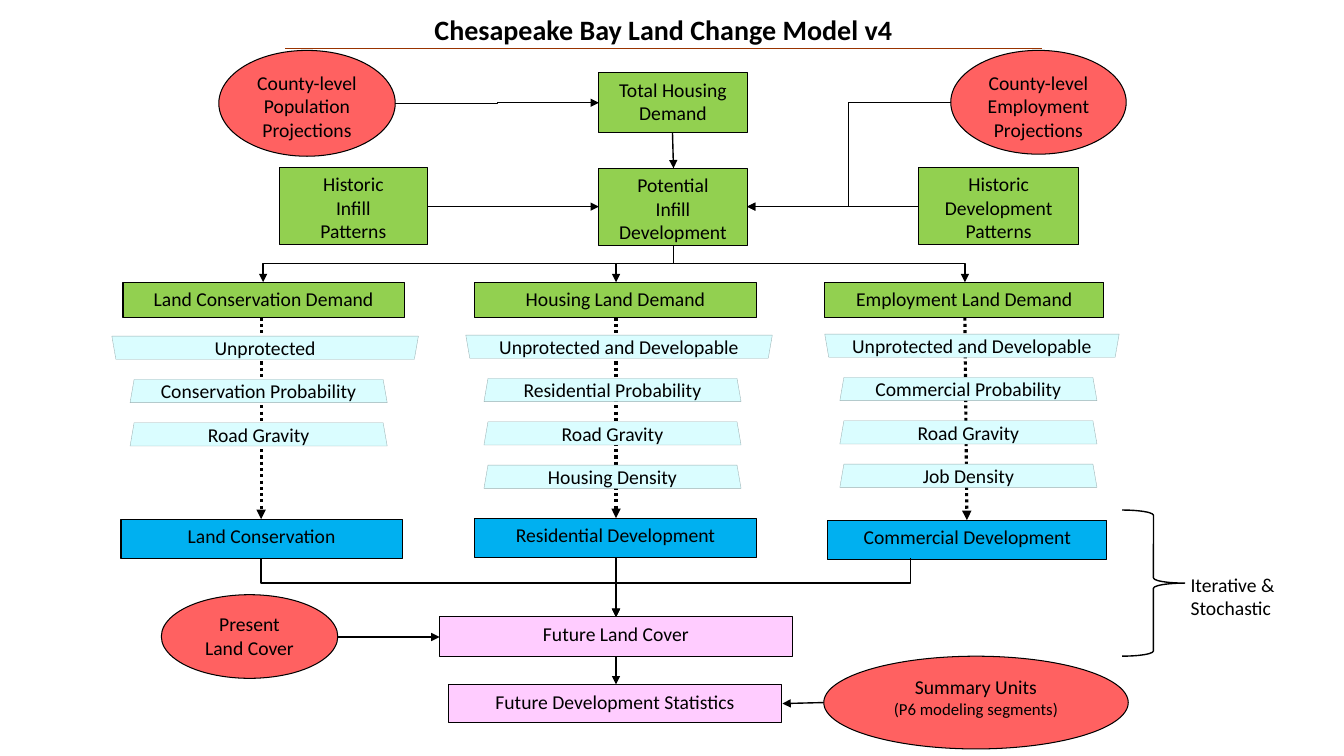
from lxml import etree
from pptx import Presentation, util as u
from pptx.dml.color import RGBColor
from pptx.enum import dml, shapes as sh, text as tx
from pptx.oxml.ns import qn

BLACK = RGBColor(0x00, 0x00, 0x00)
BROWN = RGBColor(0x99, 0x33, 0x00)
RED = RGBColor(0xFF, 0x61, 0x61)
GREEN = RGBColor(0x92, 0xD0, 0x50)
BLUE = RGBColor(0x00, 0xB0, 0xF0)
PINK = RGBColor(0xFF, 0xCC, 0xFF)
CYAN = RGBColor(0xDA, 0xFD, 0xFF)
GRAY = RGBColor(0x9A, 0xB0, 0xB2)
FONT = "Calibri"
RECT, OVAL = sh.MSO_SHAPE.RECTANGLE, sh.MSO_SHAPE.OVAL

TITLE = "Chesapeake Bay Land Change Model v4"
NOTE = "Iterative & Stochastic"

# Nodes: kind, fill, (left, top, width, height), text
NODES = [
    (OVAL, RED, (2.17, 0.5, 1.75, 1.05), "County-level\nPopulation\nProjections"),
    (OVAL, RED, (9.43, 0.5, 1.74, 1.03), "County-level\nEmployment\nProjections"),
    (RECT, GREEN, (5.94, 0.72, 1.47, 0.59), "Total Housing\nDemand"),
    (RECT, GREEN, (2.77, 1.66, 1.47, 0.77), "Historic\nInfill\nPatterns"),
    (RECT, GREEN, (5.94, 1.67, 1.47, 0.77), "Potential\nInfill\nDevelopment"),
    (RECT, GREEN, (9.11, 1.66, 1.59, 0.77), "Historic\nDevelopment\nPatterns"),
    (OVAL, RED, (1.6, 5.9, 1.75, 0.83), "Present\nLand Cover"),
    (RECT, PINK, (4.36, 6.12, 3.5, 0.39), "Future Land Cover"),
    (RECT, PINK, (4.45, 6.79, 3.3, 0.38), "Future Development Statistics"),
    (OVAL, RED, (8.17, 6.51, 3.02, 0.92), "Summary Units\n(P6 modeling segments)"),
]

# Columns: demand (left, width, text), goal (left, top, width, text),
# dotted line x at both ends, first bar (left, width), other bars' left,
# middle of the first bar, bar texts
COLS = [
    ((1.22, 2.79, "Land Conservation Demand"),
     (1.2, 5.15, 2.79, "Land Conservation"), (2.59, 2.59),
     (1.11, 3.04), 1.29, 3.45,
     ["Unprotected", "Conservation Probability", "Road Gravity"]),
    ((4.71, 2.79, "Housing Land Demand"),
     (4.71, 5.14, 2.79, "Residential Development"), (6.11, 6.11),
     (4.62, 3.04), 4.8, 3.44,
     ["Unprotected and Developable", "Residential Probability",
      "Road Gravity", "Housing Density"]),
    ((8.18, 2.77, "Employment Land Demand"),
     (8.21, 5.16, 2.77, "Commercial Development"), (9.57, 9.59),
     (8.18, 2.92), 8.33, 3.43,
     ["Unprotected and Developable", "Commercial Probability",
      "Road Gravity", "Job Density"]),
]
BAR_W, BAR_H, STEP, SLANT = 2.55, 0.23, 0.43, 0.04

# Arrows: start x, y, end x, y, width
STRAIGHT = [
    (6.67, 1.31, 6.68, 1.67, 1), (4.23, 2.05, 5.94, 2.05, 0.75),
    (9.11, 2.05, 7.41, 2.05, 0.75), (6.11, 5.53, 6.11, 6.12, 1),
    (3.35, 6.32, 4.36, 6.32, 1), (6.11, 6.51, 6.11, 6.79, 1),
    (8.17, 6.97, 7.76, 6.98, 1),
]
ACROSS = [(3.92, 1.03, 5.94, 1.02, 0.75), (9.43, 1.02, 7.41, 2.05, 0.75)]
# Down first: start x, y, end x, y, share of the drop before the bend
DOWN = [(6.68, 2.43, x, 2.8, 0.5) for x in (2.61, 6.11, 9.57)]
DOWN += [(x, 5.54, 6.11, 6.12, 0.417) for x in (2.59, 9.03)]

deck = Presentation()
deck.slide_width, deck.slide_height = u.Inches(13.33), u.Inches(7.5)
parts = deck.slides.add_slide(deck.slide_layouts[6]).shapes


def write(shape, words, size=14, bold=False, align=tx.PP_ALIGN.CENTER):
    frame = shape.text_frame
    frame.word_wrap = True
    frame.vertical_anchor = tx.MSO_ANCHOR.TOP
    frame.text = words
    for para in frame.paragraphs:
        para.alignment = align
        font = para.font
        font.name, font.size, font.bold = FONT, u.Pt(size), bold
        font.color.rgb = BLACK
    return frame


def paint(shape, fill, line=BLACK, width=0.75):
    shape.shadow.inherit = False
    shape.fill.solid()
    shape.fill.fore_color.rgb = fill
    shape.line.color.rgb = line
    shape.line.width = u.Pt(width)


def node(kind, fill, box, words):
    shape = parts.add_shape(kind, *map(u.Inches, box))
    paint(shape, fill)
    return write(shape, words)


def link(x1, y1, x2, y2, width, kind=sh.MSO_CONNECTOR.STRAIGHT,
         color=BLACK, head=True):
    line = parts.add_connector(kind, *map(u.Inches, (x1, y1, x2, y2)))
    line.line.color.rgb = color
    line.line.width = u.Pt(width)
    if head:
        etree.SubElement(line.line._get_or_add_ln(), qn("a:tailEnd"), type="triangle")
    etree.SubElement(line._element.spPr, qn("a:effectLst"))
    return line


def drop(x1, y1, x2, y2, bend):
    """Elbow that leaves downwards: a level elbow turned a quarter."""
    turn = 1 if x2 < x1 else -1
    mx, my = (x1 + x2) / 2, (y1 + y2) / 2
    du, dv = turn * (y2 - y1) / 2, turn * (x2 - x1) / 2
    line = link(mx - du, my + dv, mx + du, my - dv, 1, sh.MSO_CONNECTOR.ELBOW)
    props = line._element.spPr
    props.find(qn("a:xfrm")).set("rot", str(turn * 5400000 % 21600000))
    geom = props.find(qn("a:prstGeom"))
    av = geom.find(qn("a:avLst"))
    if av is None:
        av = etree.SubElement(geom, qn("a:avLst"))
    etree.SubElement(av, qn("a:gd"), name="adj1", fmla=f"val {round(bend * 100000)}")


def bar(left, mid, width, words, flip):
    """Slanted bar, wide at the top when flipped."""
    top, low = mid - BAR_H / 2, mid + BAR_H / 2
    a, b = (0, SLANT) if flip else (SLANT, 0)
    pen = parts.build_freeform(u.Inches(left + a), u.Inches(top))
    pen.add_line_segments([(u.Inches(x), u.Inches(y)) for x, y in (
        (left + width - a, top), (left + width - b, low), (left + b, low))])
    shape = pen.convert_to_shape()
    paint(shape, CYAN, GRAY, 0.25)
    frame = write(shape, words)
    frame.margin_top = frame.margin_bottom = 0
    frame.vertical_anchor = tx.MSO_ANCHOR.MIDDLE


# Title and rule
write(parts.add_textbox(*map(u.Inches, (2.54, 0.07, 8.08, 0.44))), TITLE, 20, True)
link(2.83, 0.48, 10.33, 0.48, 0.75, color=BROWN, head=False)

# Three columns
for demand, goal, ends, first, left, mid, names in COLS:
    dots = link(ends[0], 3.15, ends[1], goal[1], 2.25)
    dots.line.dash_style = dml.MSO_LINE.ROUND_DOT
    node(RECT, GREEN, (demand[0], 2.8, demand[1], 0.35), demand[2])
    node(RECT, BLUE, (*goal[:3], 0.39), goal[3])
    for row, name in enumerate(names):
        x, w = (left, BAR_W) if row else first
        bar(x, mid + row * STEP, w, name, row == 0)

# Arrows
for ends in STRAIGHT:
    link(*ends)
for ends in ACROSS:
    link(*ends, kind=sh.MSO_CONNECTOR.ELBOW)
for ends in DOWN:
    drop(*ends)

# Nodes
for item in NODES:
    frame = node(*item)
frame.paragraphs[1].font.size = u.Pt(12)

# Brace and its note
brace = parts.add_shape(sh.MSO_SHAPE.RIGHT_BRACE, *map(u.Inches, (11.13, 5.06, 0.62, 1.45)))
brace.shadow.inherit = False
brace.fill.background()
brace.line.color.rgb = BLACK
brace.line.width = u.Pt(1)
write(parts.add_textbox(*map(u.Inches, (11.71, 5.63, 1.33, 0.57))), NOTE,
      align=tx.PP_ALIGN.LEFT)

deck.save("out.pptx")
